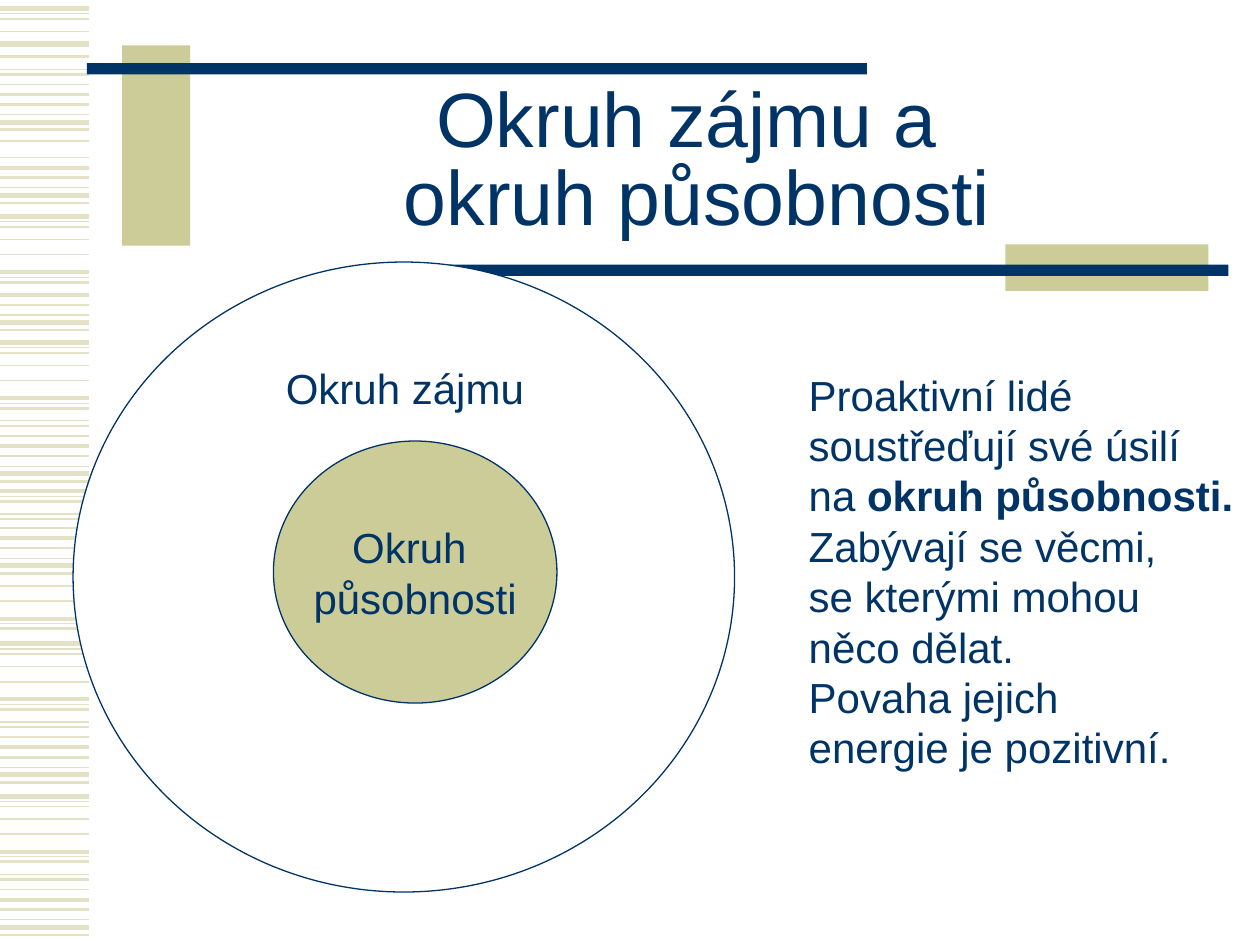
import dataclasses

import pptx
import pptx.dml.color
import pptx.enum.shapes
import pptx.enum.text
import pptx.oxml.xmlchemy
import pptx.util

Inches = pptx.util.Inches
Align = pptx.enum.text.PP_ALIGN
Anchor = pptx.enum.text.MSO_ANCHOR
AutoSize = pptx.enum.text.MSO_AUTO_SIZE
ShapeType = pptx.enum.shapes.MSO_SHAPE


@dataclasses.dataclass(frozen=True)
class Theme:
    """Colours, font and type sizes of the slide."""

    navy: str = "003366"
    olive: str = "CCCC99"
    stripe: str = "E3E2C7"
    white: str = "FFFFFF"
    font: str = "Arial"
    title_size: int = 44
    body_size: int = 24
    outline: float = 0.75


THEME = Theme()

SHORT_BAND = [(0, 1), (0.08, 2.25), (0.16, 1.5), (0.24, 0.75), (0.3, 3), (0.36, 1.5)]
LONG_BAND = [
    (0, 3), (0.04, 0.75), (0.08, 1), (0.18, 1), (0.3, 1),
    (0.44, 2.25), (0.48, 0.75), (0.52, 1.5), (0.62, 0.75), (0.66, 1.5),
]
STRIPE_BANDS = [
    (0.07, LONG_BAND[:4]),
    (0.35, LONG_BAND[:1]),
    (-0.07, LONG_BAND[7:]),
    (0.67, SHORT_BAND),
    (0.82, LONG_BAND[4:5]),
    (1.25, SHORT_BAND),
    (1.72, LONG_BAND[:8]),
    (2.26, SHORT_BAND[1:]),
    (2.72, LONG_BAND),
    (3.46, SHORT_BAND),
    (3.46, LONG_BAND[5:]),
    (4.19, SHORT_BAND),
    (4.47, LONG_BAND[3:8]),
    (5.11, LONG_BAND),
    (5.85, SHORT_BAND),
    (6.32, LONG_BAND),
    (7.06, SHORT_BAND),
]

PROACTIVE_LINES = [
    ["Proaktivní lidé"],
    ["soustřeďují své úsilí"],
    ["na ", "okruh působnosti."],
    ["Zabývají se věcmi,"],
    ["se kterými mohou"],
    ["něco dělat."],
    ["Povaha jejich"],
    ["energie je pozitivní."],
]


def rgb(value):
    """Turn a hex string into a colour."""
    return pptx.dml.color.RGBColor.from_string(value)


def format_font(font, size, bold=False):
    """Apply the theme font and colour."""
    font.name = THEME.font
    font.size = pptx.util.Pt(size)
    font.bold = bold
    font.color.rgb = rgb(THEME.navy)


def write_lines(text_frame, lines, alignment):
    """Write one paragraph per line; the second run of a line is bold."""
    text_frame.word_wrap = False
    for index, parts in enumerate(lines):
        paragraph = text_frame.paragraphs[0] if index == 0 else text_frame.add_paragraph()
        paragraph.alignment = alignment
        for position, part in enumerate(parts):
            run = paragraph.add_run()
            run.text = part
            format_font(run.font, THEME.body_size, bold=position == 1)


def add_stripes(slide):
    """Draw the margin stripes as one group of lines."""
    group = slide.shapes.add_group_shape()
    for top, band in STRIPE_BANDS:
        for offset, weight in band:
            y = Inches(top + offset)
            line = group.shapes.add_connector(
                pptx.enum.shapes.MSO_CONNECTOR.STRAIGHT, 0, y, Inches(0.71), y)
            line.line.color.rgb = rgb(THEME.stripe)
            line.line.width = pptx.util.Pt(weight)
            line._element.spPr.append(pptx.oxml.xmlchemy.OxmlElement("a:effectLst"))


def add_filled_shape(slide, kind, box, fill, outlined=False):
    """Add a flat preset shape with an optional navy outline."""
    shape = slide.shapes.add_shape(kind, *map(Inches, box))
    shape.shadow.inherit = False
    shape.fill.solid()
    shape.fill.fore_color.rgb = rgb(fill)
    if outlined:
        shape.line.color.rgb = rgb(THEME.navy)
        shape.line.width = pptx.util.Pt(THEME.outline)
    else:
        shape.line.fill.background()
    return shape


def add_label(slide, box, lines):
    """Add a left-aligned text box that fits its text."""
    text_frame = slide.shapes.add_textbox(*map(Inches, box)).text_frame
    write_lines(text_frame, lines, Align.LEFT)
    text_frame.auto_size = AutoSize.SHAPE_TO_FIT_TEXT


def set_title(slide, box, text):
    """Place and format the title placeholder."""
    title = slide.shapes.title
    title.left, title.top, title.width, title.height = map(Inches, box)
    text_frame = title.text_frame
    text_frame.text = text
    text_frame.auto_size = AutoSize.NONE
    text_frame.vertical_anchor = Anchor.MIDDLE
    paragraph = text_frame.paragraphs[0]
    paragraph.alignment = Align.CENTER
    paragraph.line_spacing = 0.85
    for run in paragraph.runs:
        format_font(run.font, THEME.title_size)


def main():
    """Build the slide and save it."""
    presentation = pptx.Presentation()
    presentation.slide_width, presentation.slide_height = Inches(10), Inches(7.5)
    slide = presentation.slides.add_slide(presentation.slide_layouts[5])

    add_stripes(slide)
    for box, fill in [
        ((0.97, 0.36, 0.54, 1.59), THEME.olive),
        ((0.69, 0.5, 6.19, 0.09), THEME.navy),
        ((7.98, 1.94, 1.61, 0.37), THEME.olive),
        ((3.56, 2.1, 6.19, 0.09), THEME.navy),
    ]:
        add_filled_shape(slide, ShapeType.RECTANGLE, box, fill)

    set_title(slide, (1.5, 0.67, 8.07, 1.25), "Okruh zájmu a \vokruh působnosti")
    add_filled_shape(slide, ShapeType.OVAL, (0.58, 2.08, 5.25, 5), THEME.white, outlined=True)
    influence = add_filled_shape(
        slide, ShapeType.OVAL, (2.17, 3.5, 2.25, 2.08), THEME.olive, outlined=True)
    influence.text_frame.vertical_anchor = Anchor.MIDDLE
    write_lines(influence.text_frame, [["Okruh "], ["působnosti"]], Align.CENTER)
    add_label(slide, (2.17, 2.83, 2.09, 0.5), [["Okruh zájmu"]])
    add_label(slide, (6.32, 2.88, 3.57, 3.3), PROACTIVE_LINES)

    presentation.save("out.pptx")


if __name__ == "__main__":
    main()
